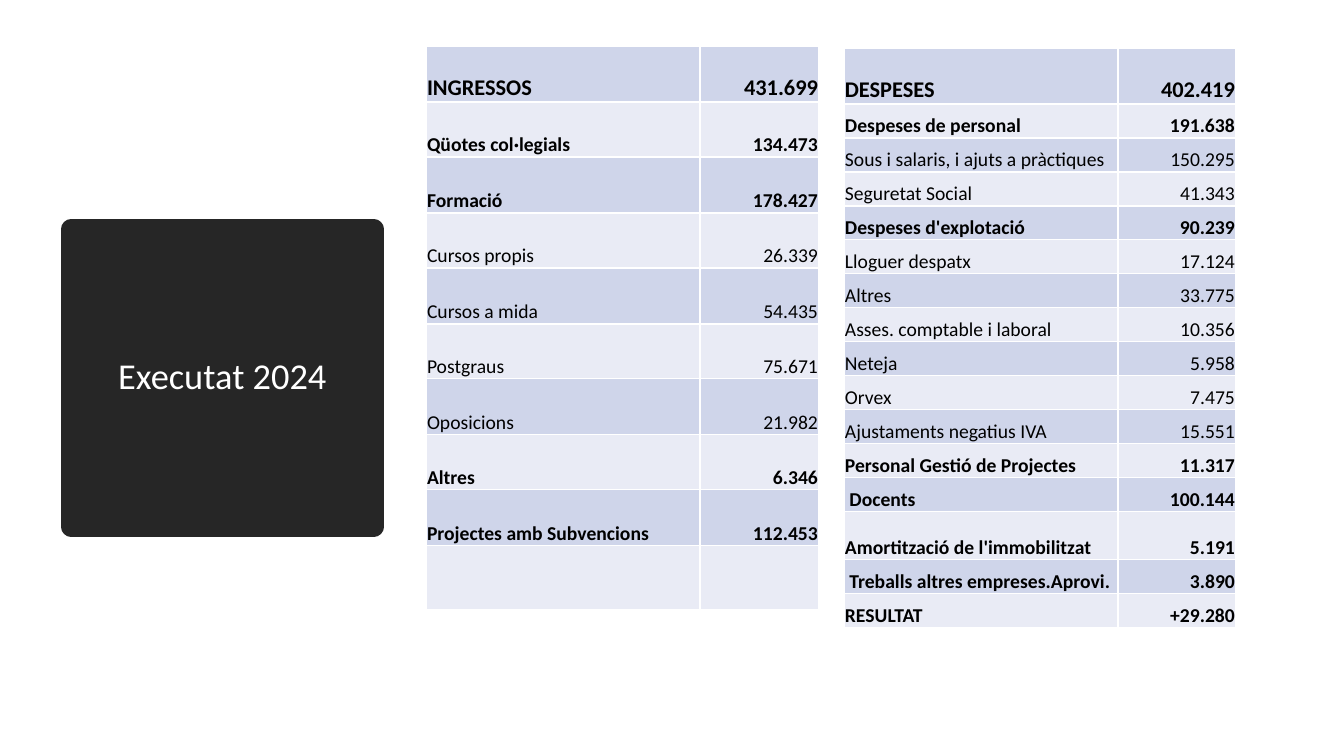
from lxml.etree import SubElement
from pptx import Presentation
from pptx.dml.color import RGBColor
from pptx.enum.text import MSO_ANCHOR, PP_ALIGN
from pptx.oxml import parse_xml
from pptx.oxml.ns import nsdecls, qn
from pptx.util import Emu, Pt

COLORS = {
    "white": "FFFFFF",
    "black": "000000",
    "title": "262626",
    "dark_band": "CFD5EA",
    "light_band": "E9EBF5",
}

INCOME = [
    ("INGRESSOS", "431.699", True),
    ("Qüotes col·legials", "134.473", True),
    ("Formació", "178.427", True),
    ("Cursos propis", "26.339", False),
    ("Cursos a mida", "54.435", False),
    ("Postgraus", "75.671", False),
    ("Oposicions", "21.982", False),
    ("Altres", "6.346", True),
    ("Projectes amb Subvencions", "112.453", True),
    ("", "", False),
]
INCOME_HEIGHTS = [56, 55] * 4 + [56, 64]

EXPENSES = [
    ("DESPESES", "402.419", True),
    ("Despeses de personal", "191.638", True),
    ("Sous i salaris, i ajuts a pràctiques", "150.295", False),
    ("Seguretat Social", "41.343", False),
    ("Despeses d'explotació", "90.239", True),
    ("Lloguer despatx", "17.124", False),
    ("Altres", "33.775", False),
    ("Asses. comptable i laboral", "10.356", False),
    ("Neteja", "5.958", False),
    ("Orvex", "7.475", False),
    ("Ajustaments negatius IVA", "15.551", False),
    ("Personal Gestió de Projectes", "11.317", True),
    (" Docents", "100.144", True),
    ("Amortització de l'immobilitzat", "5.191", True),
    (" Treballs altres empreses.Aprovi.", "3.890", True),
    ("RESULTAT", "+29.280", True),
]
EXPENSE_HEIGHTS = [56] + [34] * 12 + [48, 34, 34]


def px(value):
    return Emu(round(value * 914400 / 100.8))


def color(name):
    return RGBColor.from_string(COLORS[name])


class BudgetSlide:
    """Holds the style and the current slide, and adds its elements."""

    font_name = "Calibri"

    def __init__(self, presentation):
        self.slide = presentation.slides.add_slide(presentation.slide_layouts[5])

    def style(self, paragraph, size, color_name, alignment, bold=False):
        paragraph.alignment = alignment
        font = paragraph.font
        font.name = self.font_name
        font.size = Pt(size)
        font.bold = bold
        font.color.rgb = color(color_name)

    def title(self, text, left, top, width, height):
        shape = self.slide.shapes.title
        shape.left, shape.top = px(left), px(top)
        shape.width, shape.height = px(width), px(height)
        shape.fill.solid()
        shape.fill.fore_color.rgb = color("title")
        shape.line.color.rgb = color("title")
        shape.line.width = Pt(13.75)
        frame = shape.text_frame
        frame.text = text
        frame.word_wrap = True
        frame.vertical_anchor = MSO_ANCHOR.MIDDLE
        paragraph = frame.paragraphs[0]
        paragraph.line_spacing = 0.9
        self.style(paragraph, 26, "white", PP_ALIGN.CENTER)

    def table(self, rows, heights, left, top, widths):
        frame = self.slide.shapes.add_table(
            len(rows), len(widths), px(left), px(top), px(sum(widths)), px(sum(heights))
        )
        table = frame.table
        table.first_row = False
        for column, width in zip(table.columns, widths):
            column.width = px(width)
        for index, (label, amount, bold) in enumerate(rows):
            table.rows[index].height = px(heights[index])
            band = "light_band" if index % 2 else "dark_band"
            size = 14 if index else 16
            self.cell(table.cell(index, 0), label, size, bold, band, PP_ALIGN.LEFT)
            self.cell(table.cell(index, 1), amount, size, bold, band, PP_ALIGN.RIGHT)

    def cell(self, cell, text, size, bold, band, alignment):
        cell.text = text
        cell.margin_left = cell.margin_right = cell.margin_top = px(1)
        cell.margin_bottom = 0
        cell.vertical_anchor = MSO_ANCHOR.BOTTOM
        self.style(cell.text_frame.paragraphs[0], size, "black", alignment, bold)
        self.borders(cell)
        cell.fill.solid()
        cell.fill.fore_color.rgb = color(band)

    def borders(self, cell):
        properties = cell._tc.get_or_add_tcPr()
        for position, side in enumerate(("lnL", "lnR", "lnT", "lnB")):
            line = parse_xml(f'<a:{side} {nsdecls("a")} w="{Pt(1)}"/>')
            fill = SubElement(line, qn("a:solidFill"))
            SubElement(fill, qn("a:srgbClr"), val=COLORS["white"])
            properties.insert(position, line)


def main():
    presentation = Presentation()
    presentation.slide_width, presentation.slide_height = px(1344), px(756)
    budget = BudgetSlide(presentation)
    budget.title("Executat 2024", 71, 229, 303, 298)
    budget.table(INCOME, INCOME_HEIGHTS, 426, 46, (274, 119))
    budget.table(EXPENSES, EXPENSE_HEIGHTS, 844, 48, (274, 118))
    presentation.save("out.pptx")


if __name__ == "__main__":
    main()
